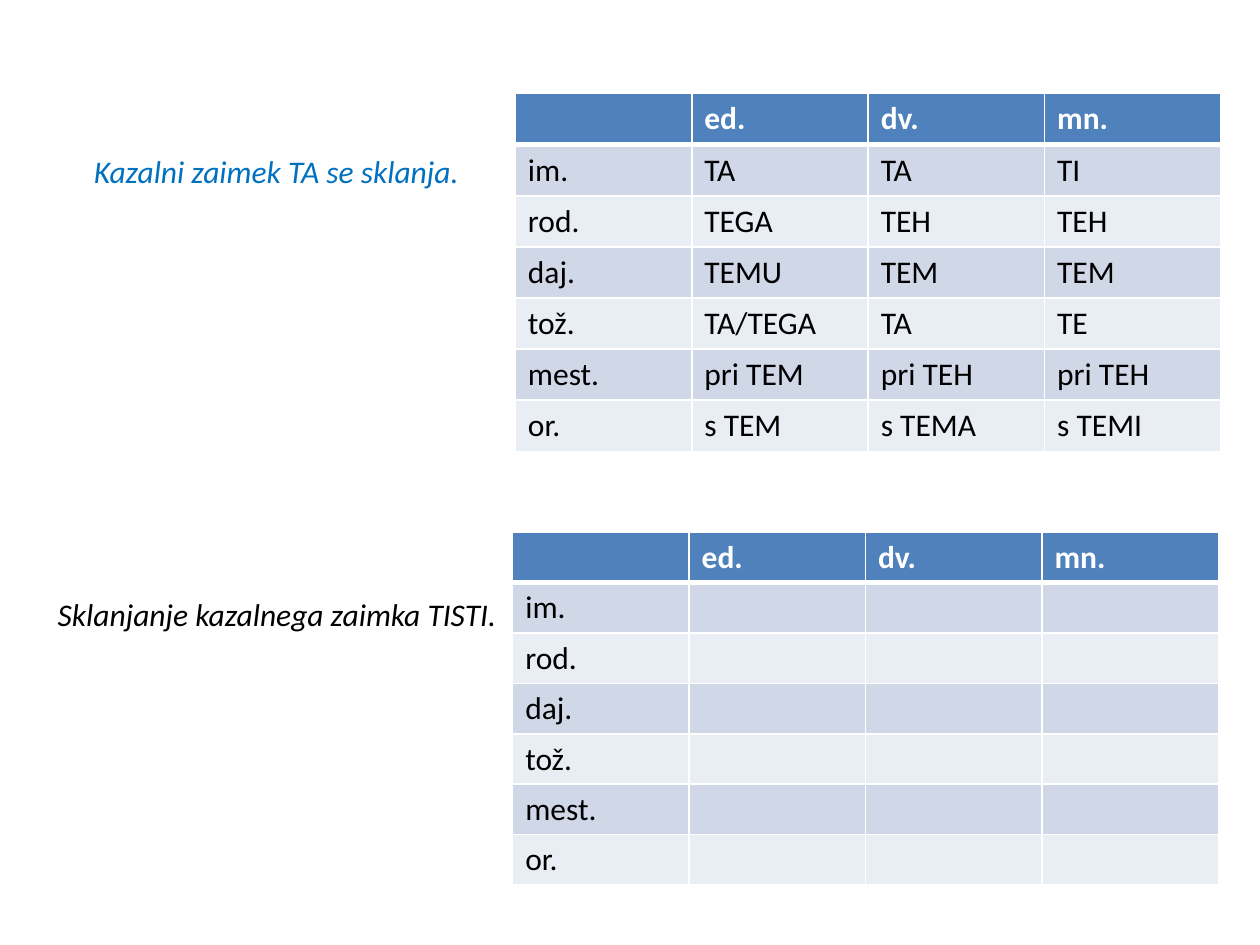
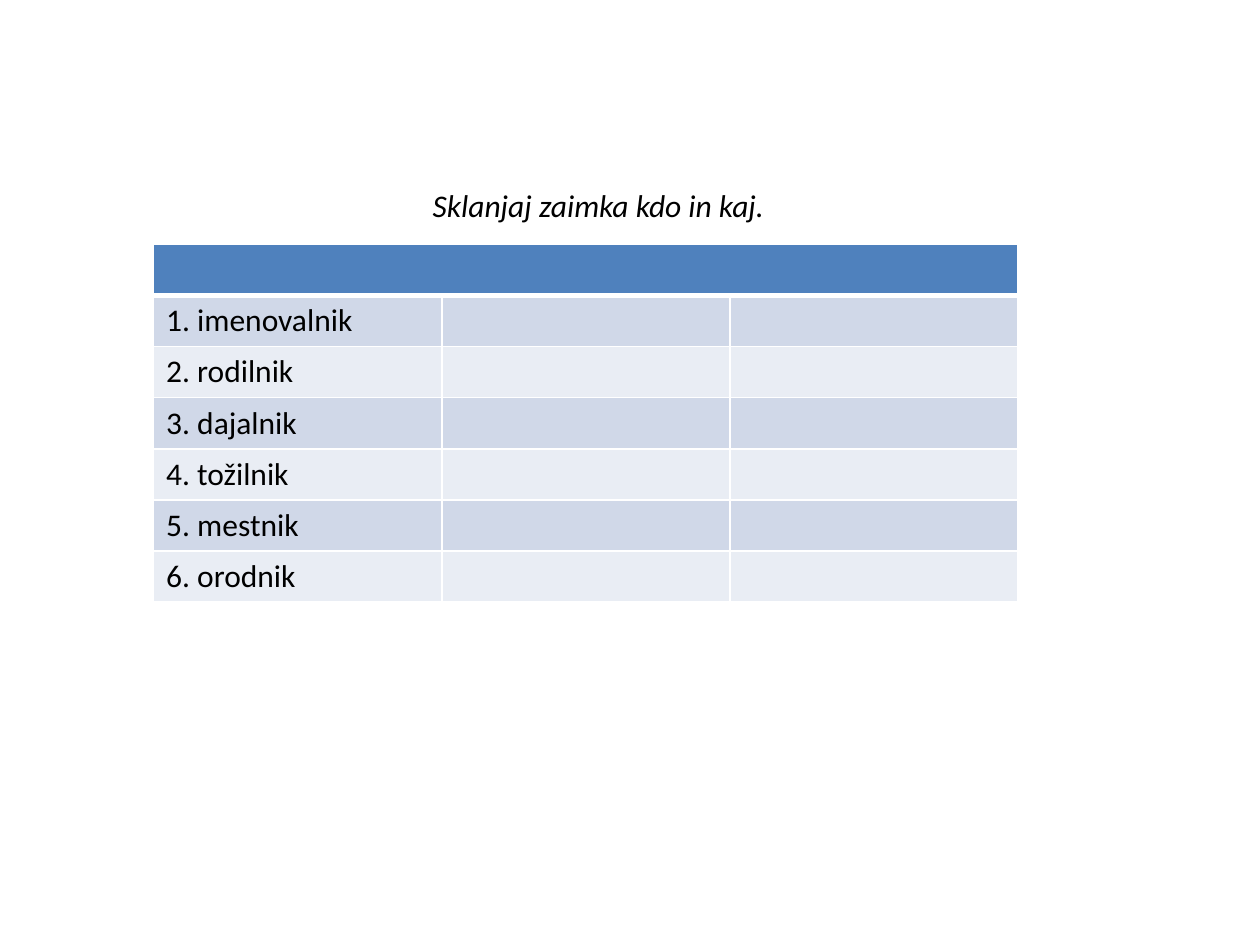
"""Build two slides with declension tables of Slovene pronouns."""
from dataclasses import dataclass

from lxml import etree
from pptx import Presentation
from pptx.dml.color import RGBColor
from pptx.enum.text import MSO_ANCHOR, PP_ALIGN
from pptx.oxml.ns import qn
from pptx.slide import Slide
from pptx.table import _Cell
from pptx.text.text import TextFrame
from pptx.util import Pt

CENTER = PP_ALIGN.CENTER
LEFT = PP_ALIGN.LEFT
MIDDLE = MSO_ANCHOR.MIDDLE
TITLE_ONLY = 5
FONT = "Calibri"
TEXT_SIZE = 18
THIN, THICK = 1, 3
COLORS = {
    "header": "4F81BD",
    "odd": "D0D8E8",
    "even": "E9EDF4",
    "white": "FFFFFF",
    "black": "000000",
    "accent": "0070C0",
}

NUMBERS = ["", "ed.", "dv.", "mn."]
CASES = ["im.", "rod.", "daj.", "tož.", "mest.", "or."]
TA_FORMS = [
    ["TA", "TA", "TI"],
    ["TEGA", "TEH", "TEH"],
    ["TEMU", "TEM", "TEM"],
    ["TA/TEGA", "TA", "TE"],
    ["pri TEM", "pri TEH", "pri TEH"],
    ["s TEM", "s TEMA", "s TEMI"],
]
CASE_NAMES = ["imenovalnik", "rodilnik", "dajalnik", "tožilnik", "mestnik", "orodnik"]


@dataclass
class Box:
    """Place and size in points."""
    left: float
    top: float
    width: float
    height: float

    def lengths(self) -> tuple[Pt, Pt, Pt, Pt]:
        """Return the four lengths for python-pptx."""
        return Pt(self.left), Pt(self.top), Pt(self.width), Pt(self.height)


@dataclass
class Declension:
    """A table with one row of headings and one row per case."""
    box: Box
    rows: list[list[str]]
    merged_header: bool = False


def style_text(frame: TextFrame, color: str, bold: bool = False, italic: bool = False) -> None:
    """Give every run the shared font."""
    for paragraph in frame.paragraphs:
        for run in paragraph.runs:
            font = run.font
            font.name, font.size = FONT, Pt(TEXT_SIZE)
            font.bold, font.italic = bold, italic
            font.color.rgb = RGBColor.from_string(COLORS[color])


def draw_title(slide: Slide, box: Box, text: str, color: str) -> None:
    """Move the title placeholder and fill it."""
    title = slide.shapes.title
    title.left, title.top, title.width, title.height = box.lengths()
    frame = title.text_frame
    frame.text = text
    frame.vertical_anchor = MIDDLE
    frame.paragraphs[0].alignment = CENTER
    style_text(frame, color, italic=True)


def draw_caption(slide: Slide, box: Box, text: str) -> None:
    """Add an italic caption beside a table."""
    frame = slide.shapes.add_textbox(*box.lengths()).text_frame
    frame.word_wrap = True
    frame.text = text
    frame.paragraphs[0].alignment = LEFT
    style_text(frame, "black", italic=True)


def set_borders(cell: _Cell, top: float, bottom: float) -> None:
    """Draw white lines on all four sides of a cell."""
    properties = cell._tc.get_or_add_tcPr()
    for side, width in (("L", THIN), ("R", THIN), ("T", top), ("B", bottom)):
        line = etree.SubElement(properties, qn(f"a:ln{side}"), w=str(Pt(width)))
        fill = etree.SubElement(line, qn("a:solidFill"))
        etree.SubElement(fill, qn("a:srgbClr"), val=COLORS["white"])


def draw_declension(slide: Slide, declension: Declension) -> None:
    """Add a banded table."""
    rows = declension.rows
    table = slide.shapes.add_table(
        len(rows), len(rows[0]), *declension.box.lengths()
    ).table
    for row_index, row in enumerate(rows):
        header = row_index == 0
        band = "header" if header else ("even", "odd")[row_index % 2]
        for column_index, form in enumerate(row):
            cell = table.cell(row_index, column_index)
            set_borders(cell, THICK if row_index == 1 else THIN, THICK if header else THIN)
            cell.fill.solid()
            cell.fill.fore_color.rgb = RGBColor.from_string(COLORS[band])
            cell.text_frame.text = form
            style_text(cell.text_frame, "white" if header else "black", bold=header)
    if declension.merged_header:
        table.cell(0, 0).merge(table.cell(0, len(rows[0]) - 1))


def main() -> None:
    """Build and save the presentation."""
    presentation = Presentation()
    presentation.slide_width, presentation.slide_height = Pt(720), Pt(540)
    layout = presentation.slide_layouts[TITLE_ONLY]

    demonstratives = presentation.slides.add_slide(layout)
    draw_title(demonstratives, Box(24.5, 21.6, 267, 152), "Kazalni zaimek TA se sklanja.", "accent")
    ta_rows = [NUMBERS] + [[case, *forms] for case, forms in zip(CASES, TA_FORMS)]
    draw_declension(demonstratives, Declension(Box(294.5, 53.5, 403.2, 201.6), ta_rows))
    draw_caption(demonstratives, Box(25.9, 336.2, 318, 29), "Sklanjanje kazalnega zaimka TISTI.")
    tisti_rows = [NUMBERS] + [[case, "", "", ""] for case in CASES]
    draw_declension(demonstratives, Declension(Box(293, 304, 403.2, 201.6), tisti_rows))

    interrogatives = presentation.slides.add_slide(layout)
    draw_title(interrogatives, Box(0, 21.6, 684, 191.5), "Sklanjaj zaimka kdo in kaj.", "black")
    kdo_kaj_rows = [[""] * 3] + [
        [f"{number}. {name}", "", ""] for number, name in enumerate(CASE_NAMES, 1)
    ]
    draw_declension(
        interrogatives,
        Declension(Box(87.8, 139.7, 494, 204.5), kdo_kaj_rows, merged_header=True),
    )

    presentation.save("out.pptx")


if __name__ == "__main__":
    main()
